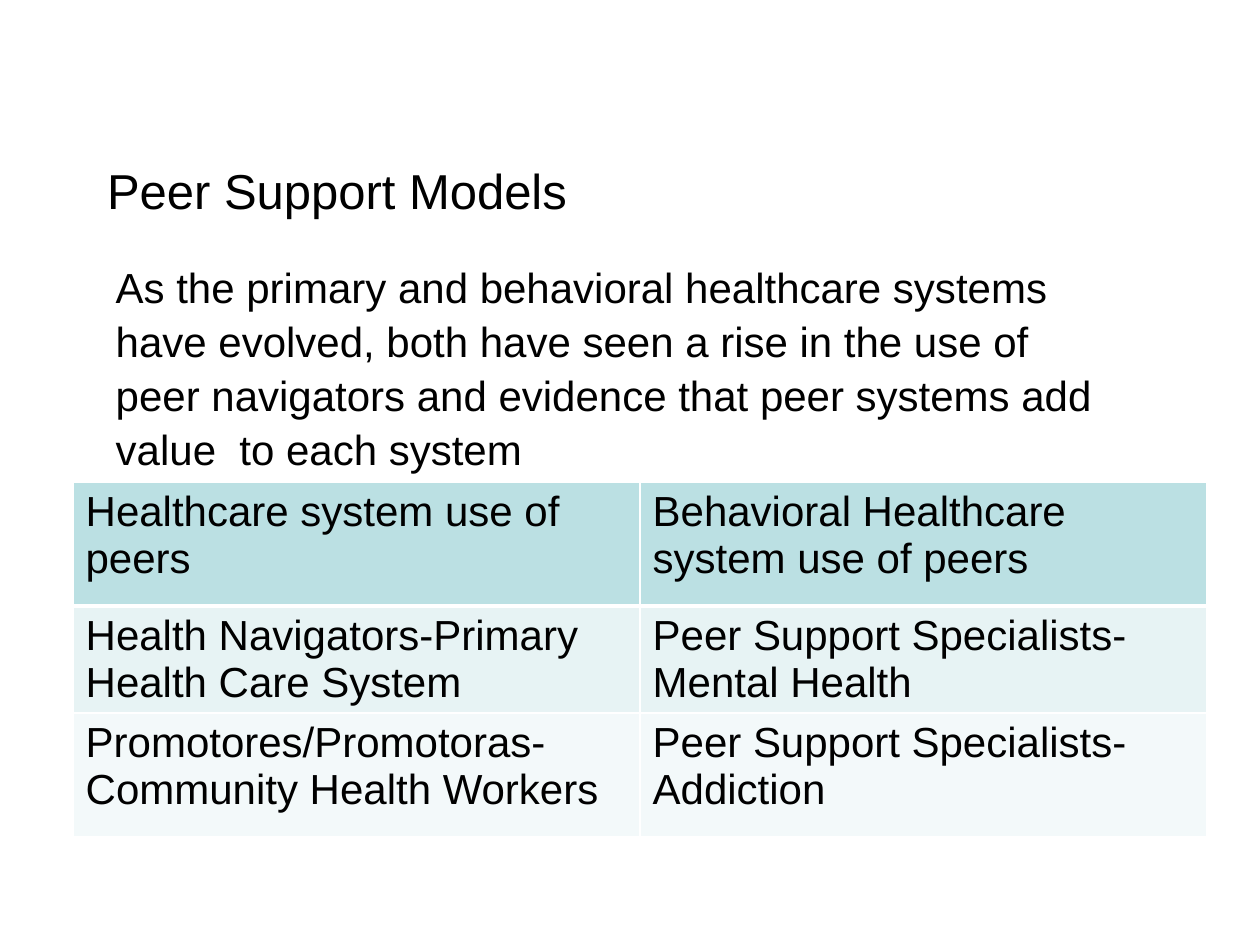
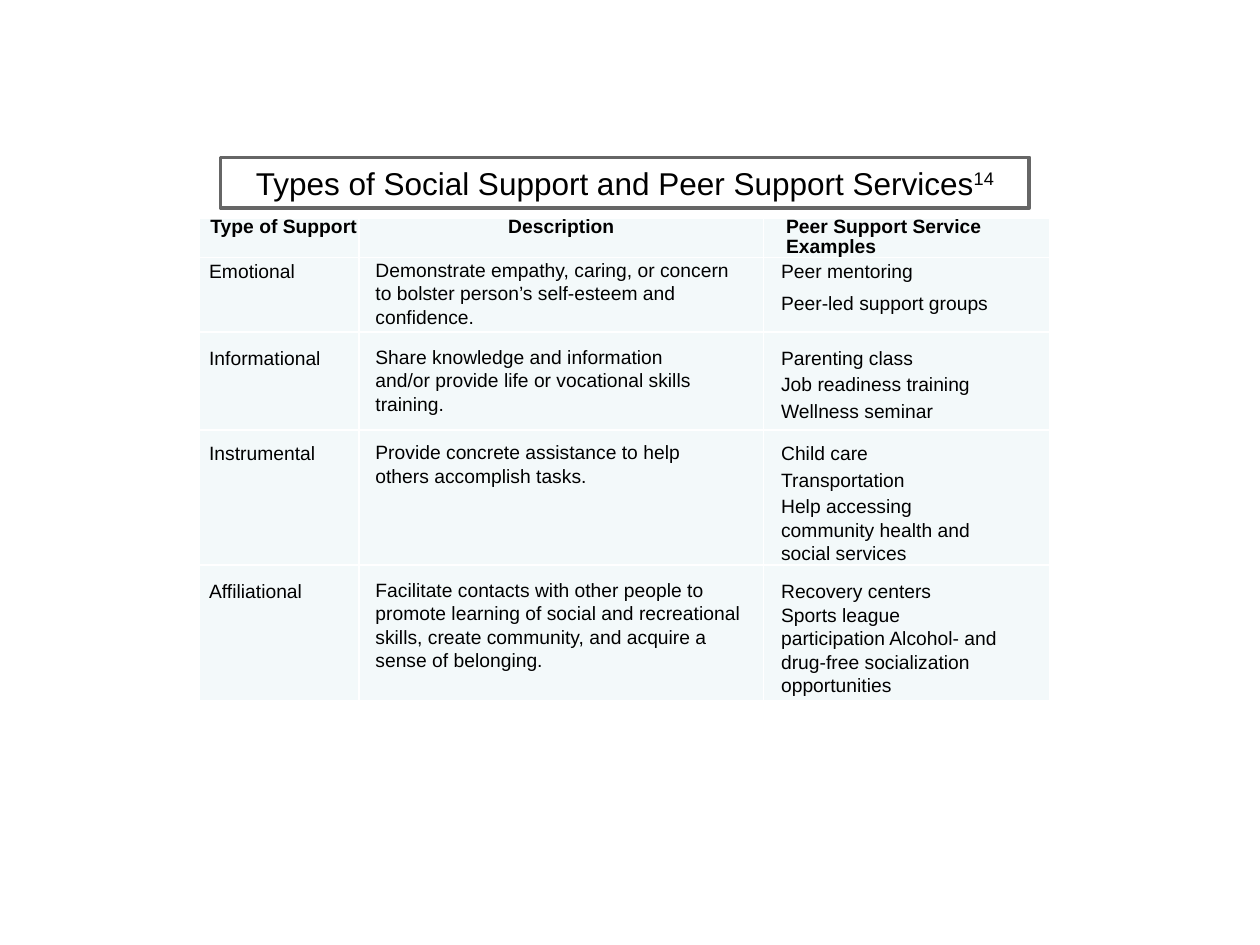
"""Build two slides on peer support models and types of social support."""
from dataclasses import dataclass

from lxml import etree
from pptx import Presentation
from pptx import util as u
from pptx.dml.color import RGBColor
from pptx.enum import text as t
from pptx.oxml import ns

BLACK = RGBColor(0x00, 0x00, 0x00)
WHITE = RGBColor(0xFF, 0xFF, 0xFF)
GREY = RGBColor(0x66, 0x66, 0x66)
TEAL = RGBColor(0xBB, 0xE0, 0xE3)
PALE = RGBColor(0xE7, 0xF3, 0xF4)
MIST = RGBColor(0xF3, 0xF9, 0xFA)

FACE = "Arial"
LONG = 25
LEFT, MID = t.PP_ALIGN.LEFT, t.PP_ALIGN.CENTER


@dataclass
class Box:
    """Place and size in inches."""
    left: float
    top: float
    width: float
    height: float

    def emus(self) -> list:
        """Return the four lengths."""
        return [u.Inches(v) for v in (self.left, self.top, self.width, self.height)]


@dataclass
class Cell:
    """Lines of a table cell with insets in inches and gaps in points."""
    lines: list
    size: float = 24
    bold: bool = False
    left: float = 0.1
    top: float = 0.05
    right: float = 0.1
    base: float = 0.05
    gap: float = 0
    lead: object = None
    align: object = LEFT


@dataclass
class Kind:
    """One type of support, with its row layout."""
    name: str
    about: str
    items: list
    high: float
    top: float
    gap: float
    rights: tuple


KINDS = [
    Kind("Emotional",
         "Demonstrate empathy, caring, or concern to bolster person’s self-esteem and confidence.",
         ["Peer mentoring", "Peer-led support groups"], 0.59, 0, 4.4, (0, 0.17, 0)),
    Kind("Informational",
         "Share knowledge and information and/or provide life or vocational skills training.",
         ["Parenting class", "Job readiness training", "Wellness seminar"],
         0.78, 0.1, 1.3, (0, 0.45, 0)),
    Kind("Instrumental",
         "Provide concrete assistance to help others accomplish tasks.",
         ["Child care", "Transportation",
          "Help accessing community health and social services"],
         1.07, 0.08, 1.3, (0, 0.45, 0.5)),
    Kind("Affiliational",
         "Facilitate contacts with other people to promote learning of social and "
         "recreational skills, create community, and acquire a sense of belonging.",
         ["Recovery centers",
          "Sports league participation Alcohol- and drug-free socialization opportunities"],
         1.08, 0.1, 0.3, (0, 0.1, 0.36)),
]

USES = [
    ("Healthcare system use of peers", "Behavioral Healthcare system use of peers"),
    ("Health Navigators-Primary Health Care System",
     "Peer Support Specialists-Mental Health"),
    ("Promotores/Promotoras-Community Health Workers",
     "Peer Support Specialists-Addiction"),
]
INTRO = ("As the primary and behavioral healthcare systems have evolved, both have seen "
         "a rise in the use of peer navigators and evidence that peer systems add "
         "value  to each system")


def dress(item, form: dict) -> None:
    """Set attributes from a dict of format values."""
    for key, val in form.items():
        setattr(item, key, val)


def ink(run, size: float, bold: bool = False) -> None:
    """Format a run."""
    dress(run.font, {"name": FACE, "size": u.Pt(size), "bold": bold})
    run.font.color.rgb = BLACK


def write(par, words: str, size: float, bold: bool = False):
    """Add a formatted run to a paragraph."""
    run = par.add_run()
    run.text = words
    ink(run, size, bold)
    return run


def edge(cell, side: str, wide: float) -> None:
    """Add a white border to one side of a cell."""
    props = cell._tc.get_or_add_tcPr()
    line = etree.SubElement(props, ns.qn(f"a:ln{side}"), w=str(u.Pt(wide)))
    fill = etree.SubElement(line, ns.qn("a:solidFill"))
    etree.SubElement(fill, ns.qn("a:srgbClr"), val=str(WHITE))


def fill_in(cell, data: Cell, tint: RGBColor) -> None:
    """Fill a cell with its colour and lines."""
    cell.fill.solid()
    cell.fill.fore_color.rgb = tint
    dress(cell, {"margin_left": u.Inches(data.left), "margin_top": u.Inches(data.top),
                 "margin_right": u.Inches(data.right), "margin_bottom": u.Inches(data.base),
                 "vertical_anchor": t.MSO_ANCHOR.TOP})
    frame = cell.text_frame
    for i, words in enumerate(data.lines):
        par = frame.add_paragraph() if i else frame.paragraphs[0]
        par.alignment = data.align
        if data.lead:
            par.line_spacing = data.lead(words)
        if i:
            par.space_before = u.Pt(data.gap)
        write(par, words, data.size, data.bold)


def grid(slide, box: Box, cols: list, highs: list, rows: list, tints: list,
         rule: float = 1) -> None:
    """Draw a table whose first row ends in a line of the given width."""
    table = slide.shapes.add_table(len(rows), len(cols), *box.emus()).table
    dress(table, {"first_row": False, "horz_banding": False})
    for col, wide in zip(table.columns, cols):
        col.width = u.Inches(wide)
    for r, (row, high, tint) in enumerate(zip(rows, highs, tints)):
        table.rows[r].height = u.Inches(high)
        for c, data in enumerate(row):
            cell = table.cell(r, c)
            wides = {"L": 1, "R": 1, "T": rule if r == 1 else 1, "B": 1 if r else rule}
            for side, wide in wides.items():
                edge(cell, side, wide)
            fill_in(cell, data, tint)


def head(slide, box: Box, words: str, size: float, align, anchor, top: float):
    """Place and format the slide title."""
    title = slide.shapes.title
    dress(title, dict(zip(("left", "top", "width", "height"), box.emus())))
    dress(title.text_frame, {"auto_size": t.MSO_AUTO_SIZE.NONE, "word_wrap": True,
                             "vertical_anchor": anchor, "margin_top": u.Inches(top)})
    par = title.text_frame.paragraphs[0]
    par.alignment = align
    write(par, words, size)
    return title


def models(slide) -> None:
    """Draw the peer support models slide."""
    head(slide, Box(0.75, 1.17, 8.75, 0.92), "Peer Support Models", 28, LEFT,
         t.MSO_ANCHOR.TOP, 0.1)
    rows = [[Cell([words]) for words in row] for row in USES]
    grid(slide, Box(0.58, 3.83, 9, 2.81), [4.5] * 2, [0.98, 0.85, 0.98], rows,
         [TEAL, PALE, MIST], 3)
    frame = slide.shapes.add_textbox(*Box(0.82, 2, 8.08, 1.7).emus()).text_frame
    frame.word_wrap = True
    par = frame.paragraphs[0]
    par.line_spacing = 1.07
    write(par, INTRO, 24)


def lead(words: str) -> float:
    """Set wrapped lines a little tighter than single ones."""
    return 1.1 if len(words) > LONG else 1.15


def types(slide) -> None:
    """Draw the types of social support slide."""
    flush = {"size": 11, "base": 0}
    top = {**flush, "bold": True, "top": 0, "lead": lambda words: u.Pt(11.3)}
    rows = [[Cell(["Type of Support"], left=0.09, right=0, **top),
             Cell(["Description"], left=1.16, right=1.16, align=MID, **top),
             Cell(["Peer Support Service Examples"], left=0.18, right=0, **top)]]
    for kind in KINDS:
        texts = ([kind.name], [kind.about], kind.items)
        rows.append([Cell(lines, left=left, right=right, top=kind.top, gap=kind.gap,
                          lead=lead, **flush)
                     for lines, left, right in zip(texts, (0.08, 0.13, 0.14), kind.rights)])
    highs = [0.31] + [kind.high for kind in KINDS]
    grid(slide, Box(1.58, 1.73, 6.75, sum(highs)), [1.27, 3.21, 2.27], highs, rows,
         [MIST] * len(rows))
    title = head(slide, Box(1.75, 1.25, 6.42, 0.4),
                 "Types of Social Support and Peer Support Services", 18, MID,
                 t.MSO_ANCHOR.MIDDLE, 0.05)
    title.line.color.rgb = GREY
    title.line.width = u.Pt(2.25)
    note = write(title.text_frame.paragraphs[0], "14", 18)
    note._r.get_or_add_rPr().set("baseline", "30000")


def main() -> None:
    """Build and save the deck."""
    deck = Presentation()
    dress(deck, {"slide_width": u.Inches(10), "slide_height": u.Inches(7.5)})
    for draw in (models, types):
        draw(deck.slides.add_slide(deck.slide_layouts[5]))
    deck.save("out.pptx")


if __name__ == "__main__":
    main()
